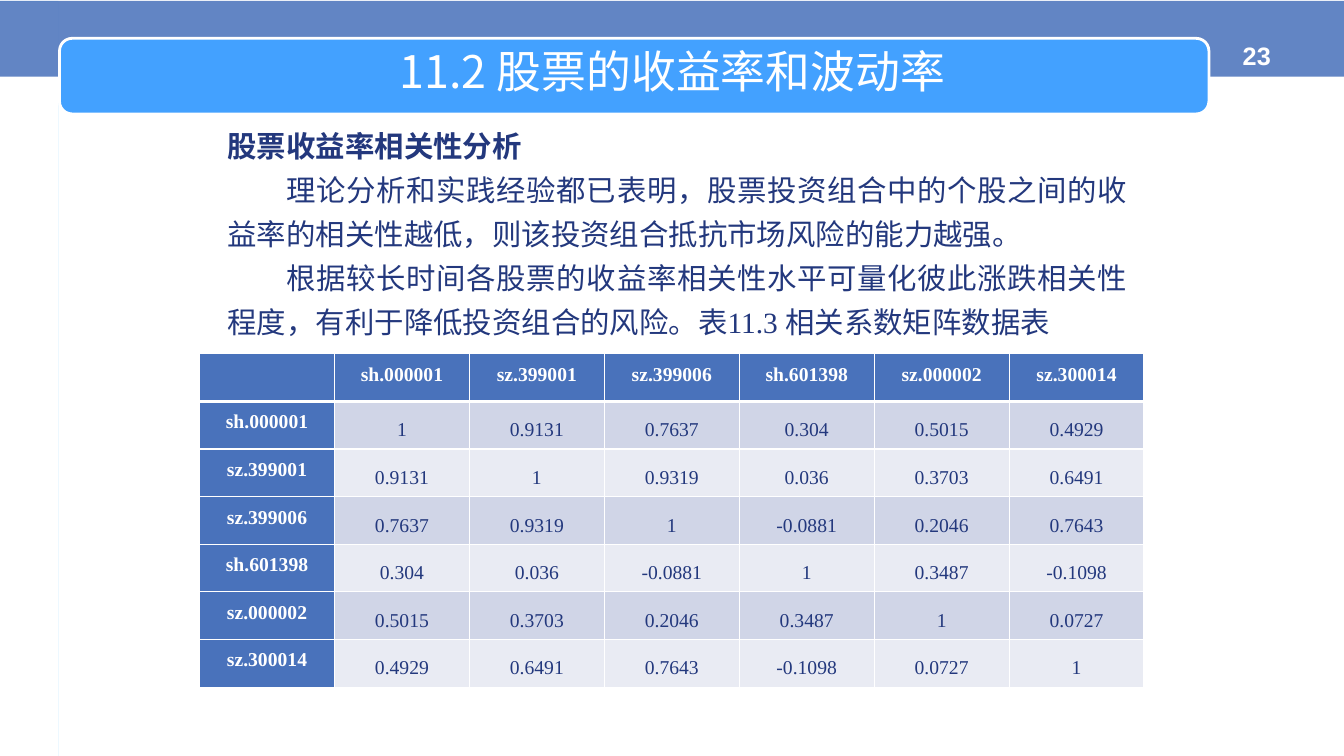
from dataclasses import dataclass
from lxml.etree import SubElement
from pptx import Presentation
from pptx.dml.color import RGBColor
from pptx.enum.dml import MSO_PATTERN as Pattern
from pptx.enum.shapes import MSO_SHAPE as Shape
from pptx.enum.text import MSO_ANCHOR as Anchor, PP_ALIGN as Align
from pptx.oxml import parse_xml
from pptx.oxml.ns import nsdecls, qn
from pptx.util import Inches, Pt


@dataclass(frozen=True)
class Theme:
    white: str = "FFFFFF"
    bar: str = "4972BB"
    banner: str = "43A1FF"
    stripe: str = "CCECFF"
    ink: str = "23387D"
    bands: tuple = ("D0D5E7", "E9EBF3")
    sans: str = "Arial"
    serif: str = "Times New Roman"
    cjk: str = "Noto Sans CJK SC"
    title_size: int = 32
    body_size: int = 21
    number_size: int = 18
    cell_size: int = 14


T = Theme()
WIDTH, HEIGHT = Inches(13.33), Inches(7.5)

HEADING = "股票收益率相关性分析"
PARAGRAPHS = (
    "理论分析和实践经验都已表明，股票投资组合中的个股之间的收益率的相关性越低，"
    "则该投资组合抵抗市场风险的能力越强。",
    "根据较长时间各股票的收益率相关性水平可量化彼此涨跌相关性程度，"
    "有利于降低投资组合的风险。表11.3 相关系数矩阵数据表",
)
CODES = ("sh.000001", "sz.399001", "sz.399006", "sh.601398", "sz.000002", "sz.300014")
# Lower triangle of the symmetric correlation matrix
CORRELATIONS = (
    ("1",),
    ("0.9131", "1"),
    ("0.7637", "0.9319", "1"),
    ("0.304", "0.036", "-0.0881", "1"),
    ("0.5015", "0.3703", "0.2046", "0.3487", "1"),
    ("0.4929", "0.6491", "0.7643", "-0.1098", "0.0727", "1"),
)


def rgb(color):
    return RGBColor.from_string(color)


def box(left, top, width, height):
    """Turn percentages of the slide into lengths."""
    return (int(WIDTH * left / 100), int(HEIGHT * top / 100),
            int(WIDTH * width / 100), int(HEIGHT * height / 100))


def set_margins(target, left, top, right, bottom):
    target.margin_left, target.margin_top = Inches(left), Inches(top)
    target.margin_right, target.margin_bottom = Inches(right), Inches(bottom)


def add_run(p, text, size, color, font, bold=False):
    r = p.add_run()
    r.text = text
    r.font.size, r.font.bold, r.font.name = Pt(size), bold, font
    r.font.color.rgb = rgb(color)
    SubElement(r.font._element, qn("a:ea"), typeface=T.cjk)


def add_panel(slide, kind, area):
    sp = slide.shapes.add_shape(kind, *area)
    sp.shadow.inherit = False
    sp.line.fill.background()
    return sp


def add_text_frame(slide, area):
    tf = slide.shapes.add_textbox(*area).text_frame
    tf.word_wrap = True
    return tf


def add_backdrop(slide):
    stripe = add_panel(slide, Shape.RECTANGLE, box(0, 0.13, 4.35, 99.87))
    stripe.fill.patterned()
    stripe.fill.pattern = Pattern.DARK_HORIZONTAL
    stripe.fill.fore_color.rgb = rgb(T.white)
    stripe.fill.back_color.rgb = rgb(T.stripe)

    bar = add_panel(slide, Shape.RECTANGLE, box(0, 0.13, 100, 10))
    bar.fill.solid()
    bar.fill.fore_color.rgb = rgb(T.bar)
    color = bar._element.spPr.find(qn("a:solidFill")).find(qn("a:srgbClr"))
    SubElement(color, qn("a:alpha"), val="86000")

    banner = add_panel(slide, Shape.ROUNDED_RECTANGLE, box(4.43, 5.07, 85.52, 10))
    banner.fill.solid()
    banner.fill.fore_color.rgb = rgb(T.banner)
    banner.line.color.rgb = rgb(T.white)
    banner.line.width = Pt(2)


def add_label(slide, area, text, size, font, bold=False, anchor=Anchor.TOP):
    """Add one centred white line of text."""
    tf = add_text_frame(slide, area)
    tf.vertical_anchor = anchor
    set_margins(tf, 0.07, 0.04, 0.07, 0.04)
    p = tf.paragraphs[0]
    p.alignment = Align.CENTER
    add_run(p, text, size, T.white, font, bold)


def add_body(slide, area):
    tf = add_text_frame(slide, area)
    p = tf.paragraphs[0]
    p.line_spacing = 1.25
    add_run(p, HEADING, T.body_size, T.ink, T.serif, bold=True)
    for text in PARAGRAPHS:
        p = tf.add_paragraph()
        p.line_spacing = 1.25
        p.alignment = Align.JUSTIFY
        p._p.get_or_add_pPr().set("indent", str(Pt(2 * T.body_size)))
        add_run(p, text, T.body_size, T.ink, T.serif)


def set_borders(cell, **widths):
    """Draw white borders; widths in points are keyed by side L, R, T, B."""
    tc_pr = cell._tc.get_or_add_tcPr()
    for i, side in enumerate("LRTB"):
        tc_pr.insert(i, parse_xml(
            f'<a:ln{side} {nsdecls("a")} w="{Pt(widths.get(side, 1))}"><a:solidFill>'
            f'<a:srgbClr val="{T.white}"/></a:solidFill></a:ln{side}>'))


def fill_cell(cell, text, is_header, color):
    cell.fill.solid()
    cell.fill.fore_color.rgb = rgb(color)
    if not text:
        return
    cell.vertical_anchor = Anchor.TOP if is_header else Anchor.BOTTOM
    set_margins(cell, 0.07, 0.12 if is_header else 0, 0.07, 0 if is_header else 0.08)
    p = cell.text_frame.paragraphs[0]
    p.alignment = Align.CENTER
    p.line_spacing = Pt(T.cell_size)
    add_run(p, text, T.cell_size, T.white if is_header else T.ink, T.serif, is_header)


def add_correlation_table(slide, area):
    n = len(CODES)
    rows = [("", *CODES)]
    for i, code in enumerate(CODES):
        rows.append((code, *(CORRELATIONS[max(i, j)][min(i, j)] for j in range(n))))
    table = slide.shapes.add_table(n + 1, n + 1, *area).table
    for column in table.columns:
        column.width = area[2] // (n + 1)
    for i, row in enumerate(rows):
        table.rows[i].height = area[3] // (n + 1)
        for j, text in enumerate(row):
            cell = table.cell(i, j)
            is_header = i == 0 or j == 0
            fill_cell(cell, text, is_header, T.bar if is_header else T.bands[(i - 1) % 2])
            set_borders(cell, T=3 if i == 1 else 1, B=3 if i == 0 else 1)


def main():
    prs = Presentation()
    prs.slide_width, prs.slide_height = WIDTH, HEIGHT
    slide = prs.slides.add_slide(prs.slide_layouts[6])
    add_backdrop(slide)
    add_label(slide, box(88.97, 4.8, 9.08, 9.47), "23", T.number_size, T.sans, bold=True)
    add_body(slide, box(16.2, 15.07, 68.42, 36.13))
    add_label(slide, box(24.98, 3.6, 50.11, 11.47), "11.2 股票的收益率和波动率",
              T.title_size, T.cjk, anchor=Anchor.MIDDLE)
    add_correlation_table(slide, box(14.85, 46.8, 70.29, 44.13))
    prs.save("out.pptx")


if __name__ == "__main__":
    main()
